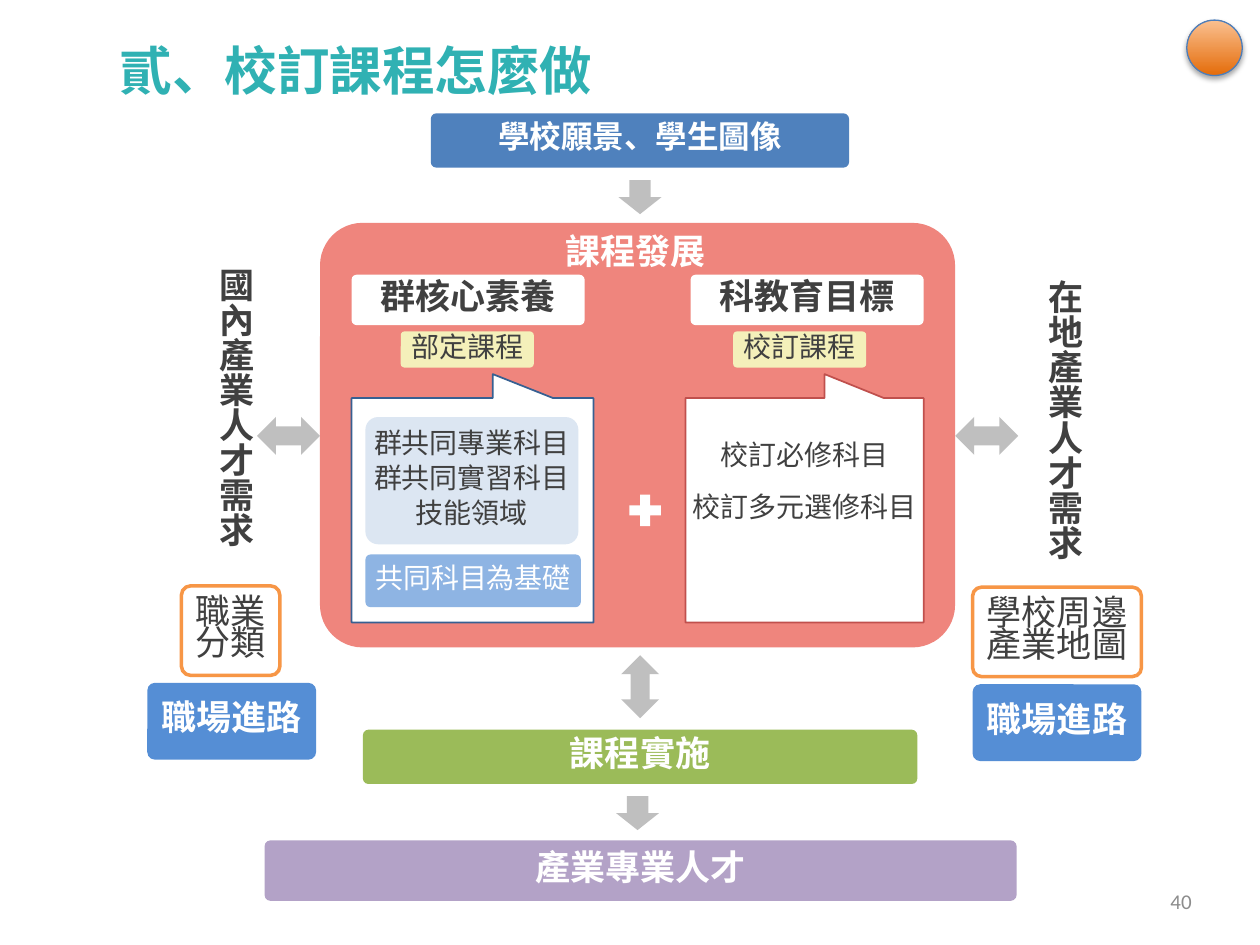
from dataclasses import dataclass

from lxml import etree
from pptx import Presentation
from pptx.dml.color import RGBColor
from pptx.enum.shapes import MSO_SHAPE
from pptx.enum.text import MSO_ANCHOR, PP_ALIGN
from pptx.oxml.ns import qn
from pptx.util import Pt

ROUNDED = MSO_SHAPE.ROUNDED_RECTANGLE
CALLOUT = MSO_SHAPE.RECTANGULAR_CALLOUT
DOWN = MSO_SHAPE.DOWN_ARROW
UP_DOWN = MSO_SHAPE.UP_DOWN_ARROW
PLUS = MSO_SHAPE.MATH_PLUS
OVAL = MSO_SHAPE.OVAL
MIDDLE = MSO_ANCHOR.MIDDLE
CENTER, LEFT, RIGHT = PP_ALIGN.CENTER, PP_ALIGN.LEFT, PP_ALIGN.RIGHT


@dataclass(frozen=True)
class Theme:
    font: str = "Noto Sans CJK SC"
    number_font: str = "Calibri"
    title_size: float = 30
    heading_size: float = 20
    vision_size: float = 18
    body_size: float = 16
    number_size: float = 12
    tight: float = 0.75
    loose: float = 1.26
    title: str = "30B1B3"
    dark: str = "404040"
    white: str = "FFFFFF"
    number: str = "8C8C8C"
    arrow: str = "BFBFBF"
    vision: str = "4F81BD"
    panel: str = "EF857D"
    tag: str = "F4F0BA"
    subjects: str = "DCE6F2"
    foundation: str = "8EB4E3"
    career: str = "558ED5"
    practice: str = "9BBB59"
    talent: str = "B3A2C7"
    survey: str = "F79646"
    group_line: str = "376092"
    school_line: str = "C0504D"
    ball_dark: str = "E46C0A"
    ball_light: str = "FAC090"
    ball_line: str = "4B7EBC"


THEME = Theme()


@dataclass(frozen=True)
class Box:
    left: float
    top: float
    width: float
    height: float

    def lengths(self) -> tuple:
        return Pt(self.left), Pt(self.top), Pt(self.width), Pt(self.height)


@dataclass(frozen=True)
class Style:
    size: float = THEME.heading_size
    color: str = THEME.white
    bold: bool = True
    font: str = THEME.font
    align: PP_ALIGN = CENTER
    spacing: float = THEME.tight
    after: float = 0.35  # share of the type size


HEADING = Style()
DARK_HEADING = Style(color=THEME.dark)
VISION = Style(size=THEME.vision_size)
BODY = Style(size=THEME.body_size, color=THEME.dark, bold=False)
LIGHT_BODY = Style(size=THEME.body_size, bold=False)
LOOSE_BODY = Style(size=THEME.body_size, color=THEME.dark, bold=False, spacing=THEME.loose)
SURVEY = Style(color=THEME.dark, bold=False, after=0)
TITLE = Style(size=THEME.title_size, color=THEME.title, align=LEFT, spacing=1, after=0)
NUMBER = Style(THEME.number_size, THEME.number, False, THEME.number_font, RIGHT, 1, 0)


@dataclass(frozen=True)
class Label:
    box: Box
    fill: str
    lines: tuple[str, ...]
    style: Style = HEADING
    line: str = ""


@dataclass(frozen=True)
class Arrow:
    kind: MSO_SHAPE
    box: Box
    rotation: float = 0


def write(frame, lines: tuple[str, ...], style: Style, inset: float = 3) -> None:
    frame.word_wrap = False
    frame.vertical_anchor = MIDDLE
    frame.margin_left = frame.margin_right = Pt(inset)
    frame.margin_top = frame.margin_bottom = Pt(3)
    for index, text in enumerate(lines):
        paragraph = frame.add_paragraph() if index else frame.paragraphs[0]
        paragraph.alignment = style.align
        paragraph.line_spacing = style.spacing
        paragraph.space_before = Pt(0)
        paragraph.space_after = Pt(style.size * style.after)
        run = paragraph.add_run()
        run.text = text
        run.font.size = Pt(style.size)
        run.font.bold = style.bold
        run.font.name = style.font
        run.font.color.rgb = RGBColor.from_string(style.color)
        east_asian = etree.SubElement(run.font._element, qn("a:ea"))
        east_asian.set("typeface", style.font)


def add_text(slide, box: Box, lines: tuple[str, ...], style: Style, vertical: bool = False) -> None:
    frame = slide.shapes.add_textbox(*box.lengths()).text_frame
    write(frame, lines, style)
    if vertical:
        frame._txBody.bodyPr.set("vert", "eaVert")


def add_shape(slide, kind: MSO_SHAPE, box: Box, fill: str, line: str = "",
              line_width: float = 1, rotation: float = 0):
    shape = slide.shapes.add_shape(kind, *box.lengths())
    shape.shadow.inherit = False
    shape.rotation = rotation
    shape.fill.solid()
    shape.fill.fore_color.rgb = RGBColor.from_string(fill)
    if line:
        shape.line.color.rgb = RGBColor.from_string(line)
        shape.line.width = Pt(line_width)
    else:
        shape.line.fill.background()
    return shape


def add_label(slide, label: Label) -> None:
    shape = add_shape(slide, ROUNDED, label.box, label.fill, label.line, 2)
    shape.adjustments[0] = 0.1
    if label.lines:
        write(shape.text_frame, label.lines, label.style)


def add_callout(slide, box: Box, line: str) -> None:
    shape = add_shape(slide, CALLOUT, box, THEME.white, line, rotation=180)
    shape.adjustments[0], shape.adjustments[1] = -0.084, 0.607


def add_ball(slide, box: Box) -> None:
    ball = add_shape(slide, OVAL, box, THEME.ball_dark, THEME.ball_line, 0.75)
    ball.fill.gradient()
    ball.fill.gradient_angle = 90
    for stop, color in zip(ball.fill.gradient_stops, (THEME.ball_dark, THEME.ball_light)):
        stop.color.rgb = RGBColor.from_string(color)
    effects = ball._element.spPr.find(qn("a:effectLst"))
    shadow = etree.SubElement(effects, qn("a:outerShdw"), blurRad=str(Pt(3.1)),
                              dist=str(Pt(1.8)), dir="5400000", rotWithShape="0")
    color = etree.SubElement(shadow, qn("a:srgbClr"), val="000000")
    etree.SubElement(color, qn("a:alpha"), val="35000")


GROUP_CALLOUT = Box(200.9, 227.5, 138.2, 128.2)
SCHOOL_CALLOUT = Box(391.7, 227.5, 136.1, 128.2)

FRAME_LABELS = (
    Label(Box(246.2, 64.8, 239, 31), THEME.vision, ("學校願景、學生圖像",), VISION),
    Label(Box(182.9, 127.4, 362.9, 242.6), THEME.panel, ()),
    Label(Box(207.4, 417, 316.8, 31), THEME.practice, ("課程實施",)),
    Label(Box(151.2, 480.2, 429.8, 34.6), THEME.talent, ("產業專業人才",)),
    Label(Box(84.2, 390.2, 96.5, 43.9), THEME.career, ("職場進路",)),
    Label(Box(555.8, 391, 96.5, 43.9), THEME.career, ("職場進路",)),
    Label(Box(103.7, 334.8, 56.2, 51.1), THEME.white, ("職業", "分類"), SURVEY, THEME.survey),
    Label(Box(555.8, 335.5, 96.5, 51.1), THEME.white, ("學校周邊", "產業地圖"), SURVEY, THEME.survey),
)
COURSE_LABELS = (
    Label(Box(200.9, 157, 133.2, 28.8), THEME.white, ("群核心素養",), DARK_HEADING),
    Label(Box(394.6, 157, 133.2, 28.8), THEME.white, ("科教育目標",), DARK_HEADING),
    Label(Box(229, 189.4, 76, 20.6), THEME.tag, ("部定課程",), BODY),
    Label(Box(419, 189.4, 76, 20.6), THEME.tag, ("校訂課程",), BODY),
    Label(Box(208.8, 238.3, 121.7, 72.7), THEME.subjects,
          ("群共同專業科目", "群共同實習科目", "技能領域"), BODY),
    Label(Box(208.8, 316.8, 123.1, 30.2), THEME.foundation, ("共同科目為基礎",), LIGHT_BODY),
)
ARROWS = (
    Arrow(DOWN, Box(353.5, 103, 24.5, 19.4)),
    Arrow(UP_DOWN, Box(355, 374.4, 21.6, 36)),
    Arrow(DOWN, Box(352.1, 455, 24.5, 19.4)),
    Arrow(UP_DOWN, Box(154.1, 231.1, 21.6, 36), 90),
    Arrow(UP_DOWN, Box(553, 231.1, 21.6, 36), 90),
)


def main() -> None:
    presentation = Presentation()
    presentation.slide_width, presentation.slide_height = Pt(720), Pt(540)
    slide = presentation.slides.add_slide(presentation.slide_layouts[5])

    # Title, page number and corner ball
    title = slide.shapes.title
    title.left, title.top, title.width, title.height = Box(61.2, 17.3, 648, 45.4).lengths()
    write(title.text_frame, ("貳、校訂課程怎麼做",), TITLE, 7.2)
    add_text(slide, Box(654.5, 500.4, 29.5, 28.8), ("40",), NUMBER)
    add_ball(slide, Box(678.2, 11.5, 31.7, 31.7))

    # Stages and the boxes on both sides
    for label in FRAME_LABELS:
        add_label(slide, label)

    # Course development panel
    add_text(slide, Box(307.4, 127.4, 111.6, 36.7), ("課程發展",), HEADING)
    add_callout(slide, GROUP_CALLOUT, THEME.group_line)
    add_callout(slide, SCHOOL_CALLOUT, THEME.school_line)
    for label in COURSE_LABELS:
        add_label(slide, label)
    add_text(slide, Box(391.7, 227.5, 136.1, 89.3), ("校訂必修科目", "校訂多元選修科目"), LOOSE_BODY)
    add_shape(slide, PLUS, Box(356.4, 279.4, 24.5, 24.5), THEME.white)

    # Arrows and vertical industry needs
    for arrow in ARROWS:
        add_shape(slide, arrow.kind, arrow.box, THEME.arrow, rotation=arrow.rotation)
    add_text(slide, Box(108, 149.8, 48.2, 185.8), ("國內產業人才需求",), DARK_HEADING, True)
    add_text(slide, Box(581.8, 157, 48.2, 185.8), ("在地產業人才需求",), DARK_HEADING, True)

    presentation.save("out.pptx")


if __name__ == "__main__":
    main()
